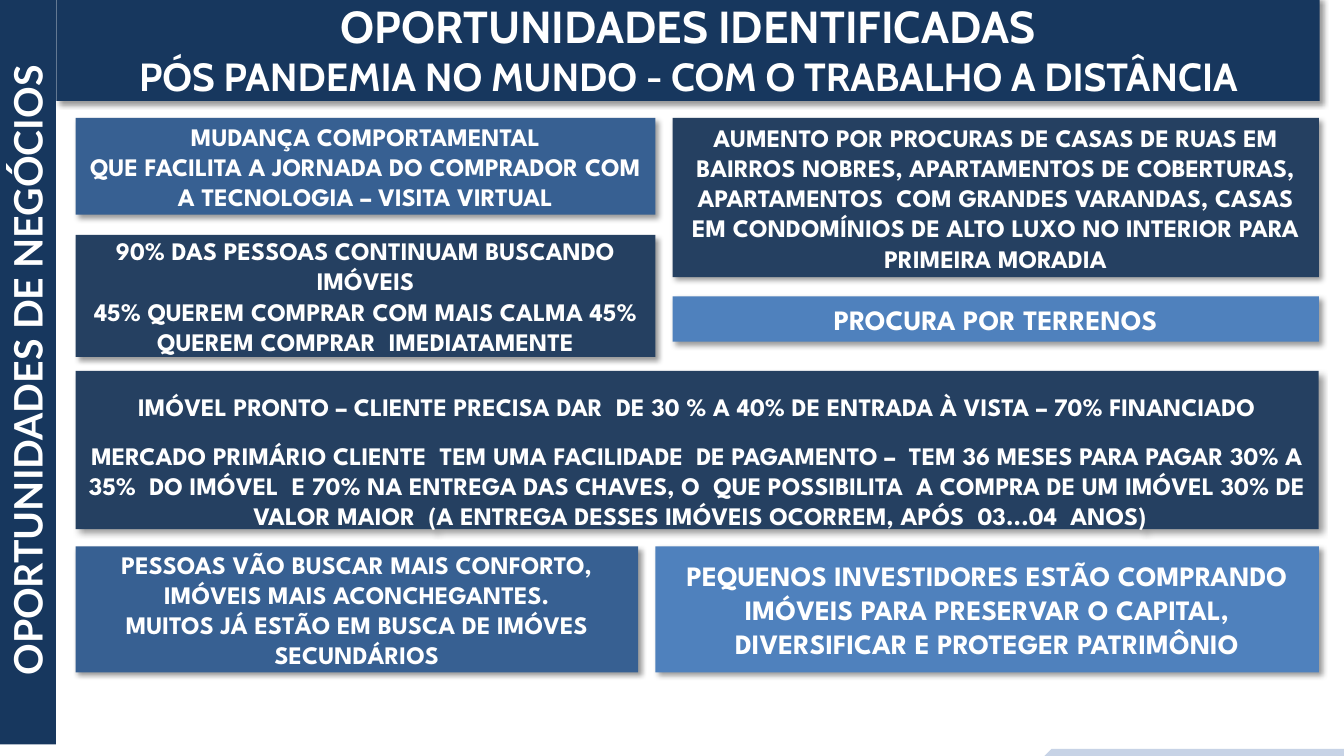
from typing import NamedTuple

from lxml import etree
from pptx import Presentation
from pptx.dml.color import RGBColor
from pptx.enum.shapes import MSO_SHAPE
from pptx.enum.text import MSO_ANCHOR, MSO_AUTO_SIZE, PP_ALIGN
from pptx.oxml.ns import qn
from pptx.util import Inches, Pt

RECT = MSO_SHAPE.RECTANGLE
MIDDLE, TOP = MSO_ANCHOR.MIDDLE, MSO_ANCHOR.TOP
CENTER = PP_ALIGN.CENTER
NO_FIT = MSO_AUTO_SIZE.NONE

COLORS = {
    "bar": "17375E",
    "dark": "254061",
    "mid": "376092",
    "light": "4F81BD",
    "corner": "C7D3E6",
    "white": "FFFFFF",
    "shadow": "000000",
}
INSET = 0.13
LEFT, RIGHT = 0.75, 13.08
COL_2 = 6.67


class Card(NamedTuple):
    left: float
    top: float
    right: float
    height: float
    color: str
    paragraphs: list[str]
    size: int = 18
    inset_top: float = INSET
    inset_bottom: float = INSET
    space_after: float = 0


CARDS = [
    Card(LEFT, 1.17, 6.5, 0.96, "mid", [
        "MUDANÇA COMPORTAMENTAL",
        "QUE FACILITA A JORNADA DO COMPRADOR COM A TECNOLOGIA – VISITA VIRTUAL"]),
    Card(LEFT, 2.33, 6.5, 1.21, "dark", [
        "90% DAS PESSOAS CONTINUAM BUSCANDO IMÓVEIS",
        "45% QUEREM COMPRAR COM MAIS CALMA 45% QUEREM COMPRAR  IMEDIATAMENTE"]),
    Card(COL_2, 1.17, RIGHT, 1.58, "dark", [
        "AUMENTO POR PROCURAS DE CASAS DE RUAS EM BAIRROS NOBRES, APARTAMENTOS DE "
        "COBERTURAS, APARTAMENTOS  COM GRANDES VARANDAS, CASAS EM CONDOMÍNIOS DE "
        "ALTO LUXO NO INTERIOR PARA PRIMEIRA MORADIA"]),
    Card(COL_2, 2.94, RIGHT, 0.45, "light", ["PROCURA POR TERRENOS"], 20),
    Card(LEFT, 3.68, RIGHT, 1.57, "dark", [
        "IMÓVEL PRONTO – CLIENTE PRECISA DAR  DE 30 % A 40% DE ENTRADA À VISTA – "
        "70% FINANCIADO",
        "MERCADO PRIMÁRIO CLIENTE  TEM UMA FACILIDADE  DE PAGAMENTO –  TEM 36 MESES "
        "PARA PAGAR 30% A 35%  DO IMÓVEL  E 70% NA ENTREGA DAS CHAVES, O  QUE "
        "POSSIBILITA  A COMPRA DE UM IMÓVEL 30% DE  VALOR MAIOR  (A ENTREGA DESSES "
        "IMÓVEIS OCORREM, APÓS  03...04  ANOS)"],
        inset_top=0.22, inset_bottom=0, space_after=13),
    Card(LEFT, 5.42, 6.33, 1.25, "mid", [
        "PESSOAS VÃO BUSCAR MAIS CONFORTO, IMÓVEIS MAIS ACONCHEGANTES.",
        "MUITOS JÁ ESTÃO EM BUSCA DE IMÓVES SECUNDÁRIOS"]),
    Card(6.5, 5.42, RIGHT, 1.25, "light", [
        "PEQUENOS INVESTIDORES ESTÃO COMPRANDO IMÓVEIS PARA PRESERVAR O CAPITAL, "
        "DIVERSIFICAR E PROTEGER PATRIMÔNIO"], 20),
]


def paint(s, color: str) -> None:
    s.fill.solid()
    s.fill.fore_color.rgb = RGBColor.from_string(COLORS[color])
    s.line.fill.background()


def add_shadow(s) -> None:
    """Give the shape a soft shadow to the lower right."""
    effects = etree.SubElement(s._element.spPr, qn("a:effectLst"))
    shadow = etree.SubElement(effects, qn("a:outerShdw"), blurRad=str(Pt(4)),
                              dist=str(Pt(3)), dir="2700000", algn="tl",
                              rotWithShape="0")
    color = etree.SubElement(shadow, qn("a:srgbClr"), val=COLORS["shadow"])
    etree.SubElement(color, qn("a:alpha"), val="40000")


def write(s, paragraphs: list[str], sizes: list[int], font: str, anchor=MIDDLE,
          inset_top: float = INSET, inset_bottom: float = INSET,
          space_after: float = 0) -> None:
    """Fill the shape with centred bold white paragraphs."""
    tf = s.text_frame
    tf.text = "\n".join(paragraphs)
    tf.word_wrap = True
    tf.auto_size = NO_FIT
    tf.vertical_anchor = anchor
    tf.margin_left = tf.margin_right = Inches(INSET)
    tf.margin_top, tf.margin_bottom = Inches(inset_top), Inches(inset_bottom)
    for p, size in zip(tf.paragraphs, sizes):
        p.alignment = CENTER
        for r in p.runs:
            r.font.name = font
            r.font.size = Pt(size)
            r.font.bold = True
            r.font.color.rgb = RGBColor.from_string(COLORS["white"])
    for p in tf.paragraphs[:-1]:
        p.space_after = Pt(space_after)


def add_corner(slide) -> None:
    builder = slide.shapes.build_freeform(Inches(10.36), Inches(7.5))
    builder.add_line_segments([(Inches(x), Inches(y)) for x, y in
                               [(10.43, 7.43), (13.33, 7.43), (13.33, 7.5)]])
    s = builder.convert_to_shape()
    paint(s, "corner")
    s.shadow.inherit = False


def add_card(slide, card: Card) -> None:
    s = slide.shapes.add_shape(RECT, Inches(card.left), Inches(card.top),
                               Inches(card.right - card.left), Inches(card.height))
    paint(s, card.color)
    add_shadow(s)
    write(s, card.paragraphs, [card.size] * len(card.paragraphs), "League Spartan",
          inset_top=card.inset_top, inset_bottom=card.inset_bottom,
          space_after=card.space_after)


def format_title(slide) -> None:
    s = slide.shapes.title
    s.left, s.top = Inches(0.56), Inches(-0.03)
    s.width, s.height = Inches(12.53), Inches(1.03)
    paint(s, "bar")
    add_shadow(s)
    write(s, ["OPORTUNIDADES IDENTIFICADAS",
              "PÓS PANDEMIA NO MUNDO - COM O TRABALHO A DISTÂNCIA"], [32, 28], "Cabin")


def add_sidebar(slide) -> None:
    s = slide.shapes.add_shape(RECT, Inches(-3.44), Inches(3.39),
                               Inches(7.42), Inches(0.57))
    s.rotation = 270
    paint(s, "bar")
    s.shadow.inherit = False
    write(s, ["OPORTUNIDADES DE NEGÓCIOS"], [28], "Lato", TOP, 0.05, 0.05)


def main() -> None:
    prs = Presentation()
    prs.slide_width, prs.slide_height = Inches(13.33), Inches(7.5)
    slide = prs.slides.add_slide(prs.slide_layouts[5])
    format_title(slide)
    add_corner(slide)
    add_sidebar(slide)
    for card in CARDS:
        add_card(slide, card)
    prs.save("out.pptx")


if __name__ == "__main__":
    main()
